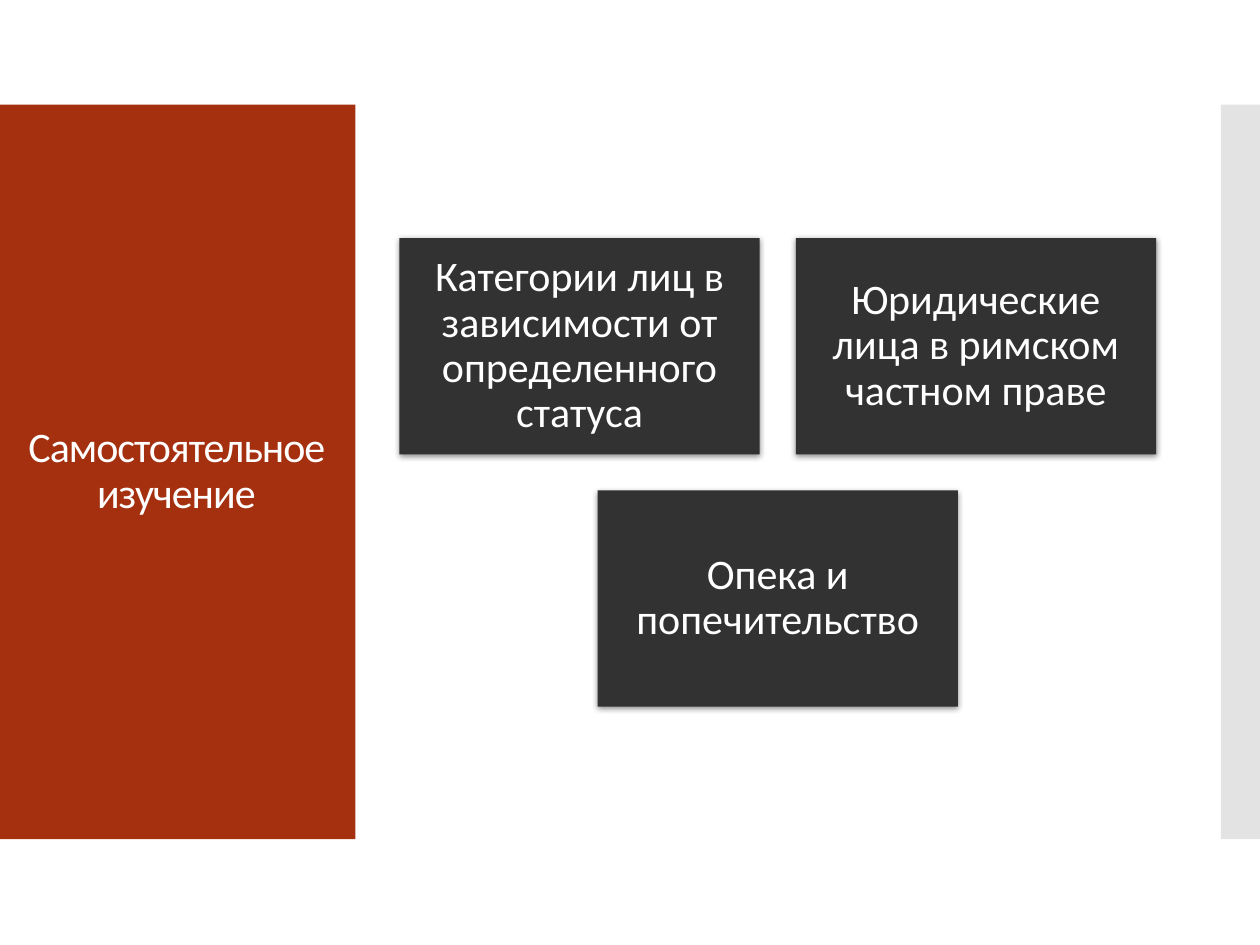
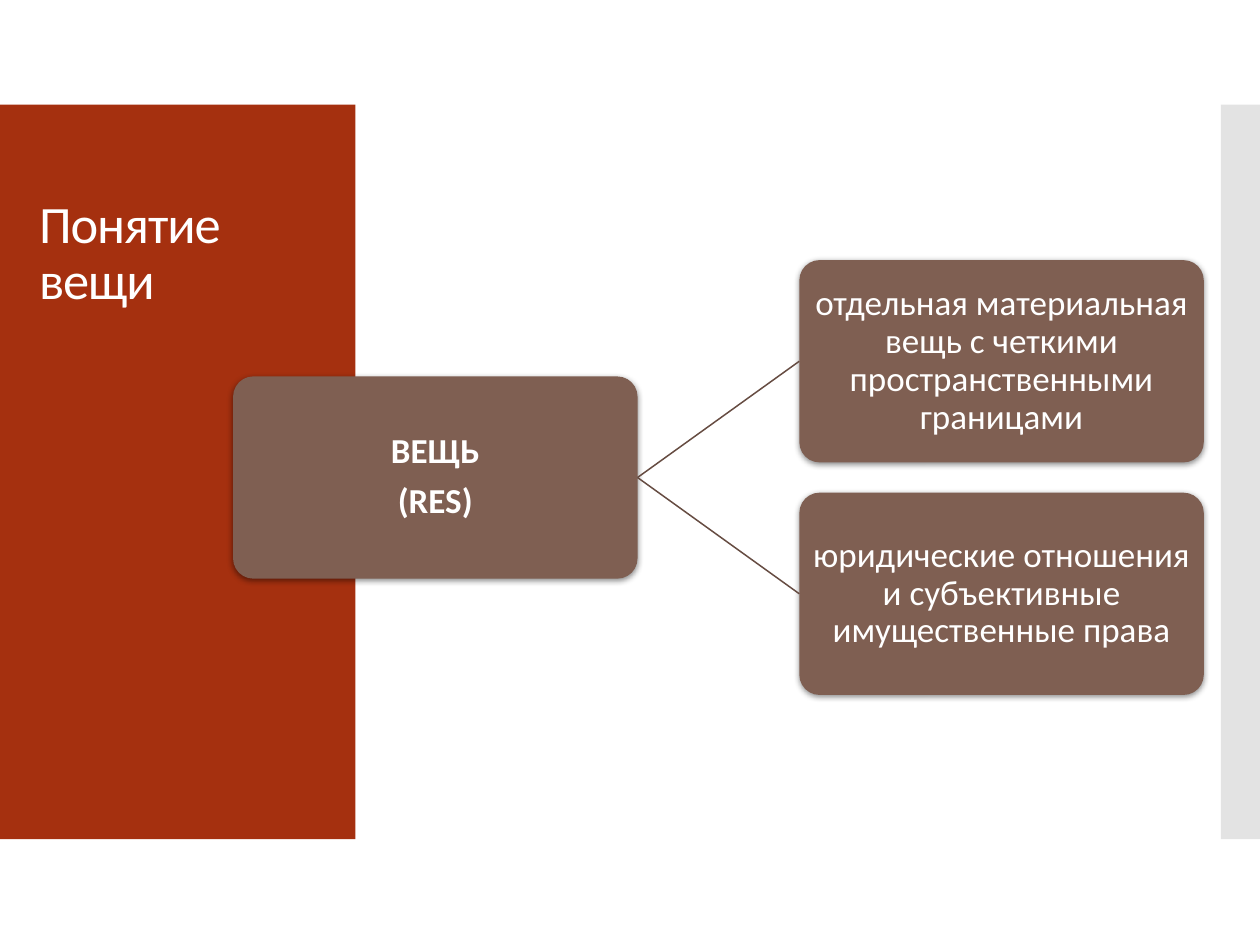
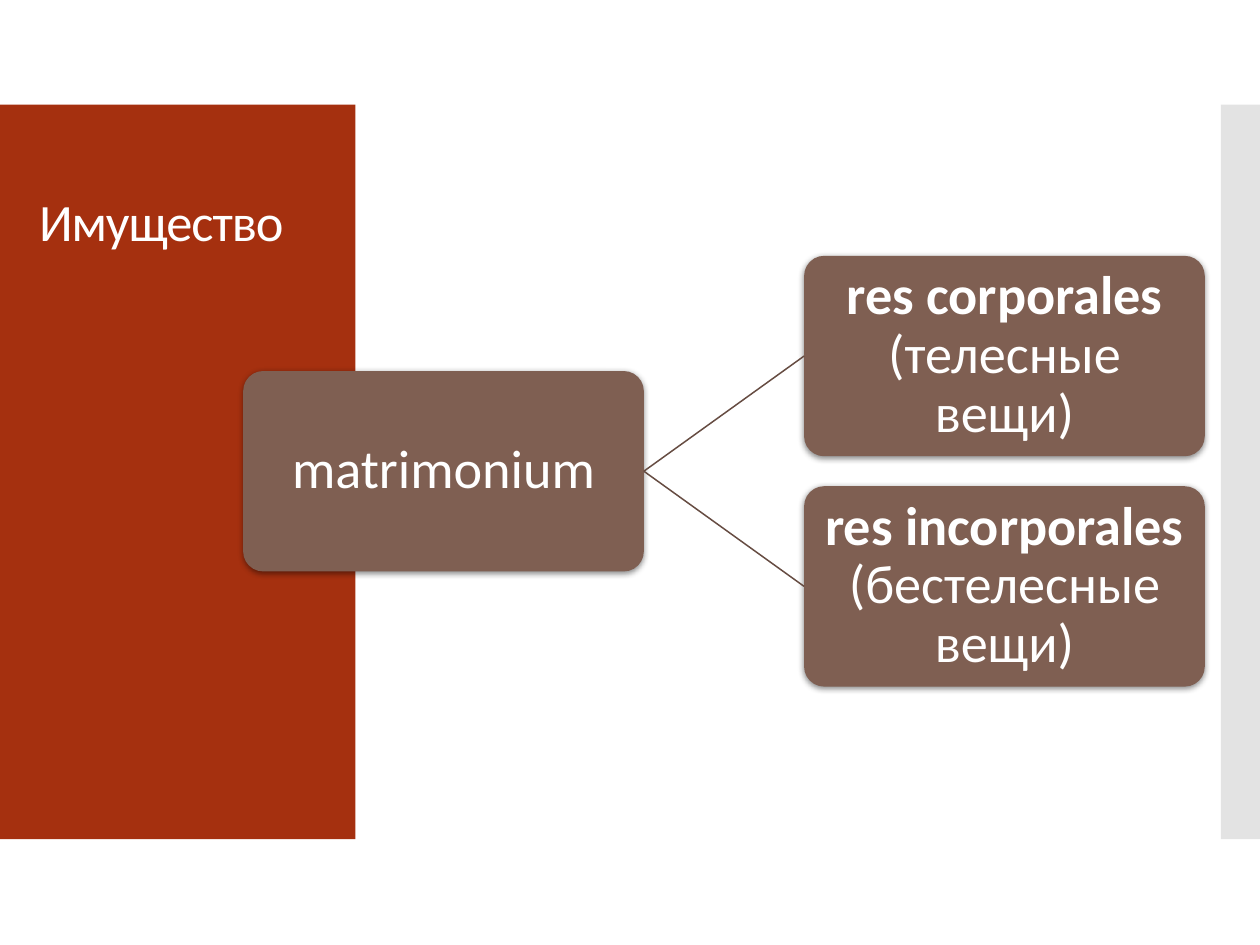
from lxml import etree
from pptx import Presentation
from pptx import util as u
from pptx.dml.color import RGBColor
from pptx.enum import shapes, text
from pptx.oxml.ns import qn

RUST = RGBColor(0xA5, 0x30, 0x0F)
GREY = RGBColor(0xC8, 0xC8, 0xC8)
DARK = RGBColor(0x32, 0x32, 0x32)
BROWN = RGBColor(0x7F, 0x5F, 0x52)
LINE = RGBColor(0x66, 0x4C, 0x42)
WHITE = RGBColor(0xFF, 0xFF, 0xFF)
BLACK = RGBColor(0, 0, 0)
FONT = "Calibri"


def write(shape, paras, size, align=text.PP_ALIGN.CENTER, inset=None, after=0, track=0):
    """Fill a shape with paragraphs, each a list of (words, bold) runs."""
    frame = shape.text_frame
    frame.word_wrap = True
    frame.auto_size = text.MSO_AUTO_SIZE.NONE
    frame.vertical_anchor = text.MSO_ANCHOR.MIDDLE
    if inset is not None:
        frame.margin_left = frame.margin_right = u.Inches(inset)
        frame.margin_top = frame.margin_bottom = u.Inches(inset)
    for i, runs in enumerate(paras):
        para = frame.add_paragraph() if i else frame.paragraphs[0]
        para.alignment = align
        para.line_spacing = 0.9
        para.space_after = u.Pt(after * size)
        for words, bold in runs:
            run = para.add_run()
            run.text = words
            font = run.font
            font.name, font.size, font.bold = FONT, u.Pt(size), bold
            font.color.rgb = WHITE
    if track:
        for props in shape.element.iter(qn("a:rPr")):
            props.set("spc", str(round(track * 100)))


def block(slide, kind, left, top, width, height, fill, shade=True):
    shape = slide.shapes.add_shape(kind, *map(u.Inches, (left, top, width, height)))
    shape.fill.solid()
    shape.fill.fore_color.rgb = fill
    shape.line.fill.background()
    shape.shadow.inherit = False
    if shade:
        effects = shape.element.spPr.find(qn("a:effectLst"))
        outer = etree.SubElement(effects, qn("a:outerShdw"), blurRad=str(u.Pt(3.5)),
                                 dist=str(u.Pt(1.1)), dir="5400000", rotWithShape="0")
        tint = etree.SubElement(outer, qn("a:srgbClr"), val=str(BLACK))
        etree.SubElement(tint, qn("a:alpha"), val="45000")
    return shape


RECT = shapes.MSO_SHAPE.RECTANGLE
ROUND = shapes.MSO_SHAPE.ROUNDED_RECTANGLE
LEFT, CENTER = text.PP_ALIGN.LEFT, text.PP_ALIGN.CENTER

deck = Presentation()
deck.slide_width, deck.slide_height = u.Inches(10), u.Inches(7.5)
layout = deck.slide_layouts.get_by_name("Title Only")
for spare in list(layout.placeholders):
    if spare.placeholder_format.type != shapes.PP_PLACEHOLDER.TITLE:
        layout.shapes.element.remove(spare.element)

# Slides and their titles: words, left, width, height, size, alignment
heads = [
    ("Самостоятельное изучение", 0, 2.8, 5.03, 24, CENTER),
    ("Понятие вещи", 0.21, 2.42, 1.58, 30, LEFT),
    ("Имущество", 0.21, 2.42, 1.1, 30, LEFT),
]
pages = []
for words, left, width, height, size, align in heads:
    page = deck.slides.add_slide(layout)
    title = page.shapes.title
    title.left, title.top = u.Inches(left), u.Inches(1.23)
    title.width, title.height = u.Inches(width), u.Inches(height)
    write(title, [[(words, False)]], size, align=align, track=-0.6)
    pages.append(page)

# Side bands, moved to the back of the shared layout
for left, width, fill in [(0, 2.82, RUST), (9.69, 0.31, GREY)]:
    band = block(pages[0], RECT, left, 0.83, width, 5.83, fill, shade=False)
    if fill == GREY:
        tint = next(band.element.spPr.iter(qn("a:srgbClr")))
        etree.SubElement(tint, qn("a:alpha"), val="50000")
    layout.shapes.element.insert(2, band.element)

# Topics: two above, one centred below
wide = 2.86
high, gap = 0.6 * wide, 0.1 * wide
topics = [
    (0, 0, "Категории лиц в зависимости от определенного статуса"),
    (1, 0, "Юридические лица в римском частном праве"),
    (0.5, 1, "Опека и попечительство"),
]
for col, row, words in topics:
    card = block(pages[0], RECT, 3.17 + col * (wide + gap), 1.89 + row * (high + gap),
                 wide, high, DARK)
    write(card, [[(words, False)]], 24, inset=0.1, after=0.35)

# Trees: page, left, middle, box width, size, inset, root, leaves
trees = [
    (pages[1], 1.85, 3.79, 3.21, 20, 0.01,
     [[("ВЕЩЬ", True)], [("(RES)", True)]],
     [[("отдельная материальная вещь с четкими пространственными границами", False)],
      [("юридические отношения и субъективные имущественные права", False)]]),
    (pages[2], 1.93, 3.74, 3.18, 31, 0.02,
     [[("matrimonium", False)]],
     [[("res corporales ", True), ("(телесные вещи)", False)],
      [("res incorporales ", True), ("(бестелесные вещи)", False)]]),
]
for page, left, mid, wide, size, inset, top, leaves in trees:
    high = wide / 2
    step = 1.15 * high
    nodes = [(0, 0, top)] + [(1, i - 0.5, [runs]) for i, runs in enumerate(leaves)]
    boxes = []
    for col, row, paras in nodes:
        box = block(page, ROUND, left + col * 1.4 * wide, mid + row * step - high / 2,
                    wide, high, BROWN)
        box.adjustments[0] = 0.1
        write(box, paras, size, inset=inset, after=0.35)
        boxes.append(box)
    root, *kids = boxes
    for kid in kids:
        link = page.shapes.add_connector(shapes.MSO_CONNECTOR.STRAIGHT, 0, 0, 0, 0)
        link.begin_connect(root, 3)
        link.end_connect(kid, 1)
        link.line.color.rgb = LINE
        link.line.width = u.Pt(0.85)
        etree.SubElement(link.element.spPr, qn("a:effectLst"))

deck.save("out.pptx")
